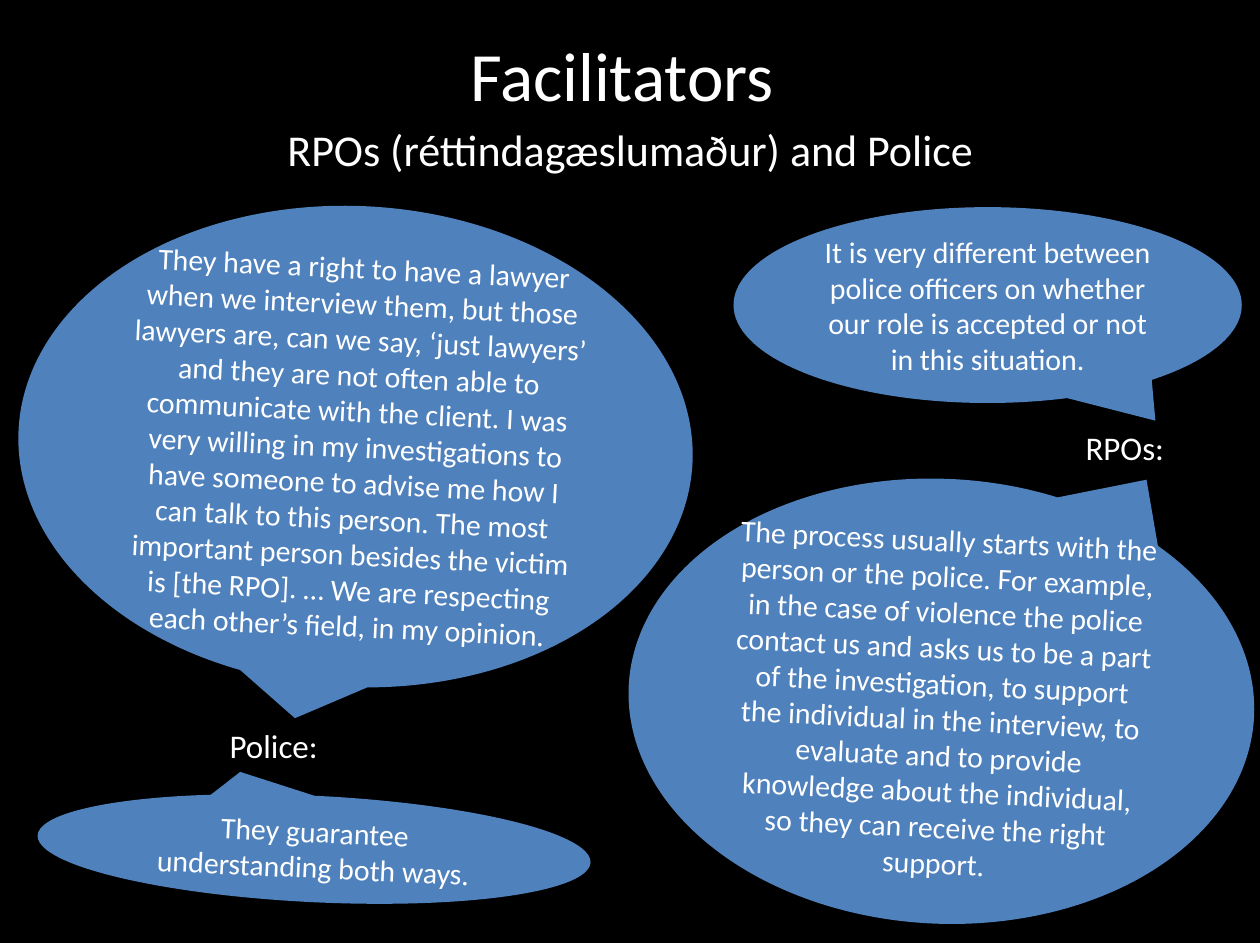
from dataclasses import dataclass
from typing import Any

from pptx import Presentation
from pptx import util as u
from pptx.dml.color import RGBColor
from pptx.enum import shapes, text

SLIDE_WIDTH, SLIDE_HEIGHT = u.Inches(11.13), u.Inches(8.33)
CENTER, LEFT = text.PP_ALIGN.CENTER, text.PP_ALIGN.LEFT


@dataclass(frozen=True)
class Theme:
    background: RGBColor = RGBColor(0x00, 0x00, 0x00)
    ink: RGBColor = RGBColor(0xFF, 0xFF, 0xFF)
    bubble: RGBColor = RGBColor(0x4F, 0x81, 0xBD)
    font: str = "Calibri"
    title: int = 44
    subtitle: int = 28
    speaker: int = 21
    quote: int = 19


@dataclass(frozen=True)
class Area:
    """Place on the slide, in percent of its width and height."""
    left: float
    top: float
    width: float
    height: float

    def box(self) -> tuple[int, int, int, int]:
        return (
            round(SLIDE_WIDTH * self.left / 100),
            round(SLIDE_HEIGHT * self.top / 100),
            round(SLIDE_WIDTH * self.width / 100),
            round(SLIDE_HEIGHT * self.height / 100),
        )


@dataclass(frozen=True)
class Quote:
    """A speech bubble; the tail is a share of its size from its centre."""
    words: str
    area: Area
    tail: tuple[float, float]
    tilt: float = 0


@dataclass(frozen=True)
class Speaker:
    words: str
    area: Area


THEME = Theme()
TILT = 2.8

QUOTES = [
    Quote(
        "They have a right to have a lawyer when we interview them, but those "
        "lawyers are, can we say, ‘just lawyers’ and they are not often able to "
        "communicate with the client. I was very willing in my investigations to "
        "have someone to advise me how I can talk to this person. The most "
        "important person besides the victim is [the RPO]. … We are respecting "
        "each other’s field, in my opinion.",
        Area(1.44, 21.85, 53.55, 51.02), (-0.07, 0.57), TILT),
    Quote(
        "It is very different between police officers on whether our role is "
        "accepted or not in this situation.",
        Area(58.22, 21.97, 40.34, 20.77), (0.33, 0.59)),
    Quote(
        "They guarantee understanding both ways.",
        Area(2.96, 84.39, 43.94, 11.28), (-0.14, -0.69), TILT),
    Quote(
        "The process usually starts with the person or the police. For example, "
        "in the case of violence the police contact us and asks us to be a part "
        "of the investigation, to support the individual in the interview, to "
        "evaluate and to provide knowledge about the individual, so they can "
        "receive the right support.",
        Area(49.87, 50.78, 49.69, 47.18), (0.31, -0.52), TILT),
]

SPEAKERS = [
    Speaker("Police:", Area(17.34, 76.35, 9.97, 5.4)),
    Speaker("RPOs:", Area(85.27, 44.78, 11.7, 5.4)),
]


def apply(target: Any, formats: dict[str, Any]) -> None:
    for name, value in formats.items():
        setattr(target, name, value)


def write(frame: Any, words: str, size: int, paragraph_format: dict[str, Any]) -> None:
    frame.word_wrap = True
    paragraph = frame.paragraphs[0]
    apply(paragraph, paragraph_format)
    run = paragraph.add_run()
    run.text = words
    apply(run.font, {"name": THEME.font, "size": u.Pt(size)})
    run.font.color.rgb = THEME.ink


def add_title(slide: Any, words: str, area: Area) -> None:
    title = slide.shapes.title
    apply(title, dict(zip(("left", "top", "width", "height"), area.box())))
    apply(title.text_frame, {
        "margin_left": 0, "margin_top": 0, "margin_right": 0, "margin_bottom": 0,
        "vertical_anchor": text.MSO_ANCHOR.MIDDLE,
    })
    write(title.text_frame, words, THEME.title,
          {"alignment": CENTER, "line_spacing": 0.9})


def add_label(slide: Any, words: str, area: Area, size: int,
              paragraph_format: dict[str, Any]) -> None:
    label = slide.shapes.add_textbox(*area.box())
    write(label.text_frame, words, size, paragraph_format)


def add_quote(slide: Any, quote: Quote) -> None:
    bubble = slide.shapes.add_shape(
        shapes.MSO_SHAPE.OVAL_CALLOUT, *quote.area.box())
    bubble.rotation = quote.tilt
    bubble.adjustments[0], bubble.adjustments[1] = quote.tail
    bubble.shadow.inherit = False
    bubble.fill.solid()
    bubble.fill.fore_color.rgb = THEME.bubble
    bubble.line.fill.background()
    bubble.text_frame.vertical_anchor = text.MSO_ANCHOR.MIDDLE
    write(bubble.text_frame, quote.words, THEME.quote,
          {"alignment": CENTER, "space_after": u.Pt(8)})


def main() -> None:
    deck = Presentation()
    apply(deck, {"slide_width": SLIDE_WIDTH, "slide_height": SLIDE_HEIGHT})
    slide = deck.slides.add_slide(deck.slide_layouts.get_by_name("Title Only"))
    slide.background.fill.solid()
    slide.background.fill.fore_color.rgb = THEME.background

    add_title(slide, "Facilitators ", Area(5.03, 0, 89.94, 16.69))
    add_label(slide, "RPOs (réttindagæslumaður) and Police ",
              Area(0.81, 9.6, 99.19, 8.76), THEME.subtitle,
              {"alignment": CENTER, "line_spacing": 1.5, "space_after": u.Pt(8)})
    for quote in QUOTES:
        add_quote(slide, quote)
    for speaker in SPEAKERS:
        add_label(slide, speaker.words, speaker.area, THEME.speaker,
                  {"alignment": LEFT})
    deck.save("out.pptx")


if __name__ == "__main__":
    main()
